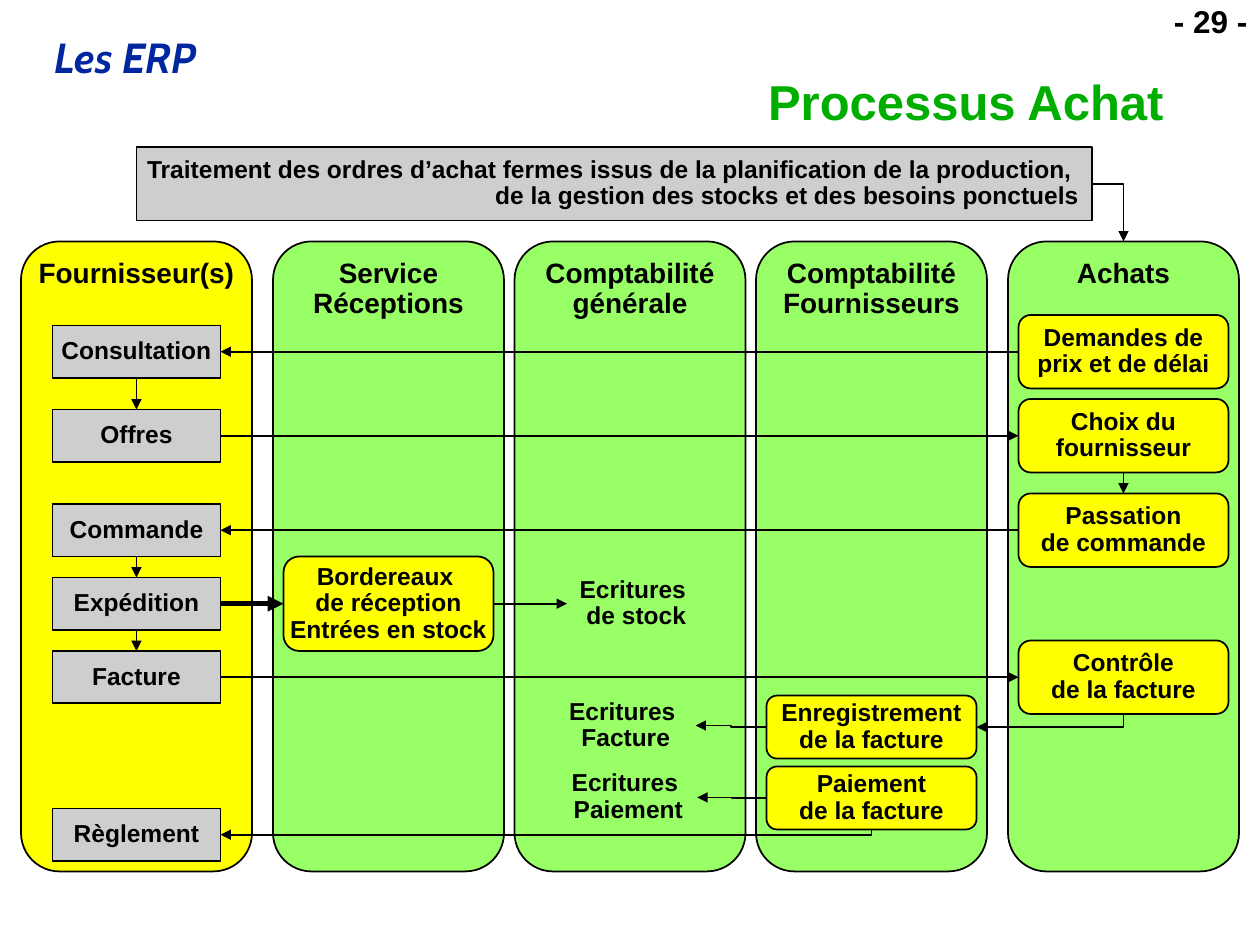
from lxml.etree import SubElement
from pptx import Presentation
from pptx.dml.color import RGBColor
from pptx.enum.shapes import MSO_CONNECTOR, MSO_SHAPE
from pptx.enum.text import MSO_ANCHOR, MSO_AUTO_SIZE, PP_ALIGN
from pptx.oxml.ns import qn
from pptx.util import Inches, Pt

COLORS = {
    "ink": "000000", "supplier": "FFFF00", "department": "99FF66",
    "document": "CECECE", "task": "FFFF00", "course": "00279F", "title": "00AE00",
}
UNITS_PER_INCH = 12  # the slide is a grid of 120 columns by 90 rows


def grid(*units):
    return [Inches(unit / UNITS_PER_INCH) for unit in units]


def color(name):
    return RGBColor.from_string(COLORS[name])


class ProcessSlide:
    font = {"name": "Arial", "bold": True}

    def __init__(self, slide):
        self.slide = slide

    def set_text(self, holder, text, size=14, align=PP_ALIGN.CENTER, ink="ink",
                 anchor=MSO_ANCHOR.MIDDLE, wrap=False, **extra_font):
        """Fill a text frame; a vertical tab in the text is a line break."""
        frame = holder.text_frame
        frame.text = text
        frame_format = {"word_wrap": wrap, "vertical_anchor": anchor,
                        "auto_size": MSO_AUTO_SIZE.NONE}
        for key, value in frame_format.items():
            setattr(frame, key, value)
        for paragraph in frame.paragraphs:
            paragraph.alignment = align
            paragraph.line_spacing = 0.9
            for run in paragraph.runs:
                for key, value in {**self.font, "size": Pt(size), **extra_font}.items():
                    setattr(run.font, key, value)
                run.font.color.rgb = color(ink)

    def title(self, text, *box, **style):
        holder = self.slide.shapes.title
        for key, value in zip(("left", "top", "width", "height"), grid(*box)):
            setattr(holder, key, value)
        self.set_text(holder, text, wrap=True, **style)

    def label(self, text, *box, **style):
        holder = self.slide.shapes.add_textbox(*grid(*box))
        self.set_text(holder, text, anchor=MSO_ANCHOR.TOP, **style)

    def block(self, text, fill, *box, kind=MSO_SHAPE.ROUNDED_RECTANGLE, **style):
        block = self.slide.shapes.add_shape(kind, *grid(*box))
        block.shadow.inherit = False
        block.fill.solid()
        block.fill.fore_color.rgb = color(fill)
        block.line.color.rgb = color("ink")
        block.line.width = Pt(1)
        self.set_text(block, text, **style)

    def arrow(self, *ends, width=1, kind=MSO_CONNECTOR.STRAIGHT, corner=False, arrow_end="tailEnd"):
        """Draw an arrow; corner gives a single bend, horizontal part first."""
        arrow = self.slide.shapes.add_connector(kind, *grid(*ends))
        arrow.line.color.rgb = color("ink")
        arrow.line.width = Pt(width)
        properties = arrow._element.spPr
        if corner:
            properties.find(qn("a:prstGeom")).set("prst", "bentConnector2")
        SubElement(properties.find(qn("a:ln")), qn(f"a:{arrow_end}"), type="triangle")
        SubElement(properties, qn("a:effectLst"))


def main():
    deck = Presentation()
    deck.slide_width, deck.slide_height = grid(120, 90)
    page = ProcessSlide(deck.slides.add_slide(deck.slide_layouts[5]))

    page.label("Les ERP", 4, 3, 97, 5.5, size=24, align=PP_ALIGN.LEFT,
               ink="course", name="Cabin", italic=True, wrap=True)
    page.label(" - 29 -", 109, 0, 11, 4.4, size=18, align=PP_ALIGN.RIGHT, wrap=True)
    page.title("Processus Achat", 17, 7, 95, 6, size=28, align=PP_ALIGN.RIGHT, ink="title")
    page.block("Traitement des ordres d’achat fermes issus de la planification de la production, \v"
               "de la gestion des stocks et des besoins ponctuels", "document",
               13, 14, 91, 7, kind=MSO_SHAPE.RECTANGLE, align=PP_ALIGN.RIGHT)

    lanes = [("Fournisseur(s)", "supplier", 2), ("Service\vRéceptions", "department", 26),
             ("Comptabilité\vgénérale", "department", 49),
             ("Comptabilité\vFournisseurs", "department", 72), ("Achats", "department", 96)]
    for name, fill, left in lanes:
        page.block(name, fill, left, 23, 22, 60, size=16, anchor=MSO_ANCHOR.TOP)

    documents = {"Consultation": 31, "Offres": 39, "Commande": 48,
                 "Expédition": 55, "Facture": 62, "Règlement": 77}
    for name, top in documents.items():
        page.block(name, "document", 5, top, 16, 5, kind=MSO_SHAPE.RECTANGLE)
    middle = {name: top + 2.5 for name, top in documents.items()}

    tasks = [("Demandes de\vprix et de délai", 97, 30, 7), ("Choix du\vfournisseur", 97, 38, 7),
             ("Passation\vde commande", 97, 47, 7), ("Contrôle\vde la facture", 97, 61, 7),
             ("Bordereaux \vde réception\nEntrées en stock", 27, 53, 9),
             ("Enregistrement\vde la facture", 73, 66.25, 6),
             ("Paiement\vde la facture", 73, 73, 6)]
    for name, left, top, height in tasks:
        page.block(name, "task", left, top, 20, height)

    entries = [("Ecritures \nde stock", 54, 54.35), ("Ecritures \nFacture", 53, 66),
               ("Ecritures \nPaiement", 53.25, 72.8)]
    for name, left, top in entries:
        page.label(name, left, top, 13.2, 6.2)

    for name in ("Consultation", "Commande"):
        page.arrow(97, middle[name], 21, middle[name])
    for name in ("Offres", "Facture"):
        page.arrow(21, middle[name], 97, middle[name])
    for upper, lower in (("Consultation", "Offres"), ("Commande", "Expédition"),
                         ("Expédition", "Facture")):
        page.arrow(13, documents[upper] + 5, 13, documents[lower])
    page.arrow(107, 45, 107, 47)
    page.arrow(21, middle["Expédition"], 27, middle["Expédition"], width=3)
    page.arrow(47, middle["Expédition"], 54, middle["Expédition"])

    elbow = {"kind": MSO_CONNECTOR.ELBOW}
    page.arrow(73, 69.25, 66.25, 69.1, **elbow)
    page.arrow(73, 76, 66.4, 75.95, **elbow)
    page.arrow(104, 17.5, 107, 23, corner=True, **elbow)
    page.arrow(93, 69.25, 107, 68, corner=True, arrow_end="headEnd", **elbow)
    page.arrow(21, middle["Règlement"], 83, 79, corner=True, arrow_end="headEnd", **elbow)

    deck.save("out.pptx")


if __name__ == "__main__":
    main()
